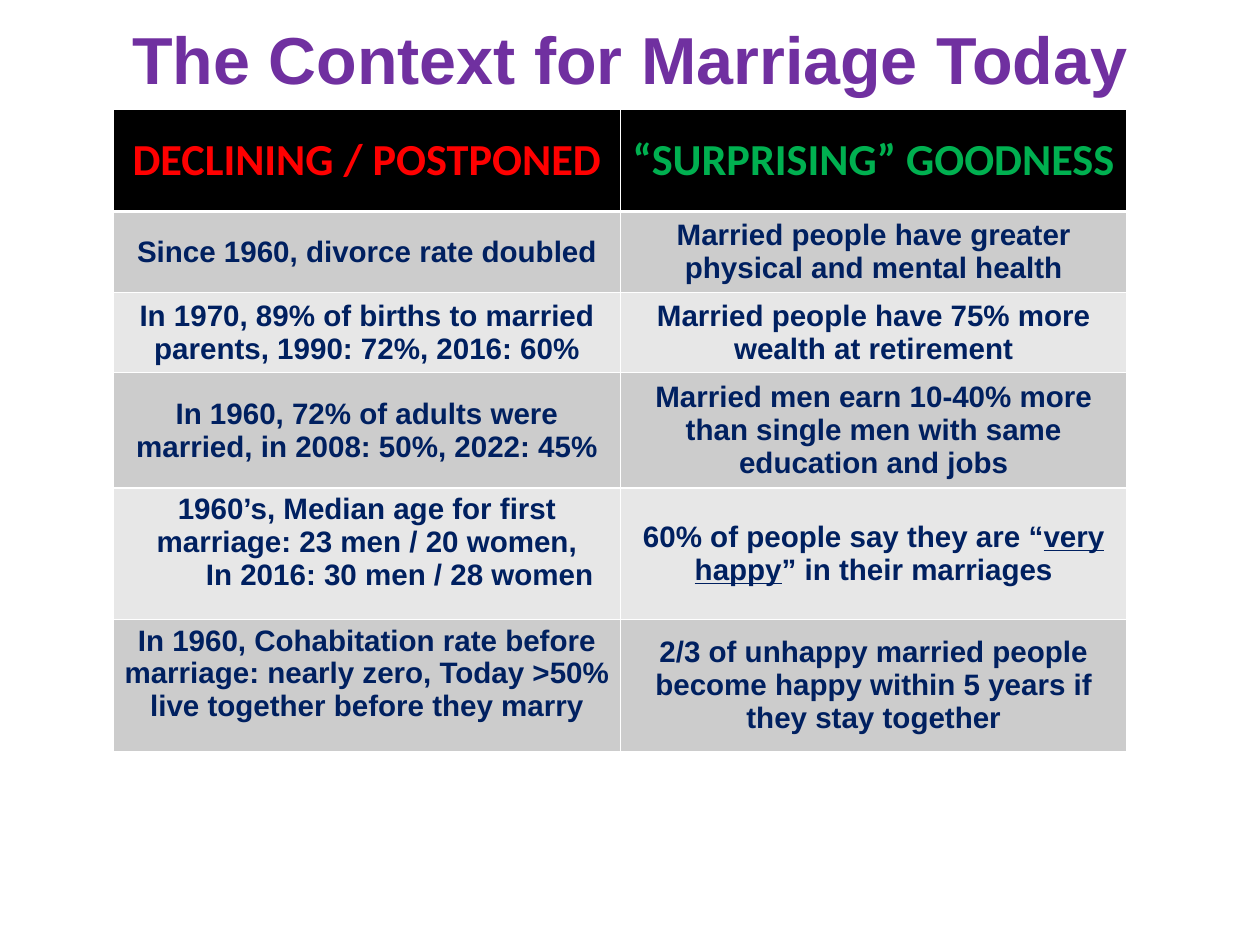
from dataclasses import dataclass

from lxml.etree import SubElement
from pptx import Presentation
from pptx.dml.color import RGBColor
from pptx.enum.text import MSO_ANCHOR, MSO_AUTO_SIZE, PP_ALIGN
from pptx.oxml.ns import qn
from pptx.util import Inches, Pt


@dataclass(frozen=True)
class Theme:
    title_color: str = "7030A0"
    decline_color: str = "FF0000"
    goodness_color: str = "00B050"
    body_color: str = "002060"
    header_fill: str = "000000"
    band_fills: tuple = ("CCCCCC", "E7E7E7")
    border_color: str = "FFFFFF"
    body_font: str = "Arial"
    header_font: str = "Calibri"
    title_size: int = 54
    header_size: int = 36
    body_size: int = 24
    thin_border: int = 1
    header_border: int = 3


HEADINGS = ["DECLINING / POSTPONED", "“SURPRISING” GOODNESS"]
# A cell is a list of paragraphs; a paragraph is a list of (text, underlined) runs.
FACTS = [
    ([[("Since 1960, divorce rate doubled", False)]],
     [[("Married people have greater physical and mental health", False)]]),
    ([[("In 1970, 89% of births to married parents, 1990: 72%, 2016: 60%", False)]],
     [[("Married people have 75% more wealth at retirement", False)]]),
    ([[("In 1960, 72% of adults were married, in 2008: 50%, 2022: 45%", False)]],
     [[("Married men earn 10-40% more than single men with same education and jobs", False)]]),
    ([[("1960’s, Median age for first marriage: 23 men / 20 women,", False)],
      [("In 2016: 30 men / 28 women", False)]],
     [[("60% of people say they are “", False), ("very happy", True),
       ("” in their marriages", False)]]),
    ([[("In 1960, Cohabitation rate before marriage: nearly zero, "
        "Today >50% live together before they marry", False)]],
     [[("2/3 of unhappy married people become happy within 5 years "
        "if they stay together", False)]]),
]
ROW_HEIGHTS = [1.15, 0.91, 0.91, 1.3, 1.48, 1.5]
TOP_ANCHORED_CELLS = {(4, 0), (5, 0)}


class SlideBuilder:
    def __init__(self, presentation, theme):
        self.theme = theme
        self.slide = presentation.slides.add_slide(presentation.slide_layouts[5])

    def add_run(self, paragraph, text, font, size, color, underline=False):
        run = paragraph.add_run()
        run.text = text
        run.font.name = font
        run.font.size = Pt(size)
        run.font.bold = True
        run.font.color.rgb = RGBColor.from_string(color)
        if underline:
            run.font.underline = True

    def set_title(self, text, left, top, width, height):
        title = self.slide.shapes.title
        title.left, title.top = Inches(left), Inches(top)
        title.width, title.height = Inches(width), Inches(height)
        frame = title.text_frame
        frame.word_wrap = True
        frame.auto_size = MSO_AUTO_SIZE.NONE
        frame.vertical_anchor = MSO_ANCHOR.MIDDLE
        frame.margin_left = frame.margin_right = frame.margin_top = frame.margin_bottom = 0
        paragraph = frame.paragraphs[0]
        paragraph.alignment = PP_ALIGN.CENTER
        self.add_run(paragraph, text, self.theme.body_font,
                     self.theme.title_size, self.theme.title_color)

    def add_table(self, left, top, column_width, row_heights):
        frame = self.slide.shapes.add_table(
            len(row_heights), 2, Inches(left), Inches(top),
            Inches(2 * column_width), Inches(sum(row_heights)))
        table = frame.table
        for column in table.columns:
            column.width = Inches(column_width)
        for row, height in zip(table.rows, row_heights):
            row.height = Inches(height)
        return table

    def style_cell(self, cell, fill, anchor, top_border, bottom_border):
        thin = self.theme.thin_border
        properties = cell._tc.get_or_add_tcPr()
        for side, width in (("L", thin), ("R", thin), ("T", top_border), ("B", bottom_border)):
            line = SubElement(properties, qn(f"a:ln{side}"), w=str(Pt(width)))
            solid = SubElement(line, qn("a:solidFill"))
            SubElement(solid, qn("a:srgbClr"), val=self.theme.border_color)
        cell.fill.solid()
        cell.fill.fore_color.rgb = RGBColor.from_string(fill)
        cell.vertical_anchor = anchor
        cell.margin_left = cell.margin_right = Inches(0.06)
        cell.margin_top = cell.margin_bottom = Inches(0.06)

    def fill_cell(self, cell, paragraphs, font, size, color):
        """Write centred paragraphs, indenting each one after the first."""
        for index, runs in enumerate(paragraphs):
            frame = cell.text_frame
            paragraph = frame.add_paragraph() if index else frame.paragraphs[0]
            paragraph.alignment = PP_ALIGN.CENTER
            if index:
                paragraph._p.get_or_add_pPr().set("marL", str(Inches(0.74)))
            for text, underline in runs:
                self.add_run(paragraph, text, font, size, color, underline)

    def add_comparison(self, headings, facts):
        theme = self.theme
        table = self.add_table(1.28, 1.24, 5.72, ROW_HEIGHTS)
        heading_colors = (theme.decline_color, theme.goodness_color)
        for column, (heading, color) in enumerate(zip(headings, heading_colors)):
            cell = table.cell(0, column)
            self.style_cell(cell, theme.header_fill, MSO_ANCHOR.MIDDLE,
                            theme.thin_border, theme.header_border)
            self.fill_cell(cell, [[(heading, False)]], theme.header_font,
                           theme.header_size, color)
        for row, fact_pair in enumerate(facts, start=1):
            top_border = theme.header_border if row == 1 else theme.thin_border
            for column, paragraphs in enumerate(fact_pair):
                cell = table.cell(row, column)
                at_top = (row, column) in TOP_ANCHORED_CELLS
                anchor = MSO_ANCHOR.TOP if at_top else MSO_ANCHOR.MIDDLE
                self.style_cell(cell, theme.band_fills[(row - 1) % 2], anchor,
                                top_border, theme.thin_border)
                self.fill_cell(cell, paragraphs, theme.body_font,
                               theme.body_size, theme.body_color)


def main():
    presentation = Presentation()
    presentation.slide_width = Inches(14.22)
    presentation.slide_height = Inches(10.67)
    builder = SlideBuilder(presentation, Theme())
    builder.set_title("The Context for Marriage Today", 0.86, 0.07, 12.5, 1.17)
    builder.add_comparison(HEADINGS, FACTS)
    presentation.save("out.pptx")


if __name__ == "__main__":
    main()
